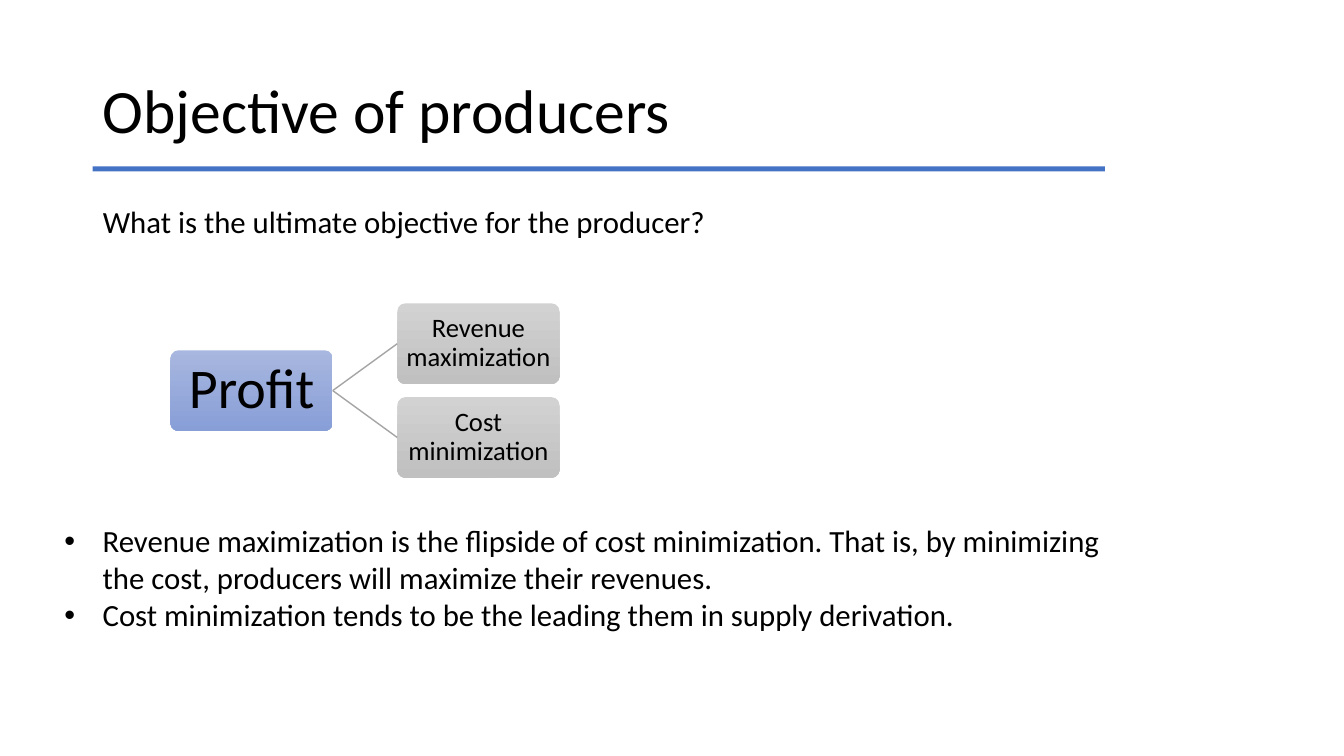
"""Build the slide on the objective of producers."""
from lxml.etree import SubElement
from pptx import Presentation
from pptx.dml.color import RGBColor
from pptx.enum.shapes import MSO_CONNECTOR, MSO_SHAPE
from pptx.enum.text import MSO_ANCHOR, MSO_AUTO_SIZE, PP_ALIGN
from pptx.oxml.ns import qn
from pptx.util import Inches, Pt


def color(value):
    return RGBColor.from_string(value)


def write(shape, lines, size, align=PP_ALIGN.LEFT, anchor=MSO_ANCHOR.TOP, spacing=0.9, before=0, bullet=None):
    frame = shape.text_frame
    frame.word_wrap = True
    frame.auto_size = MSO_AUTO_SIZE.NONE
    frame.vertical_anchor = anchor
    frame.text = "\n".join(lines)
    for paragraph in frame.paragraphs:
        properties = paragraph._p.get_or_add_pPr()
        indent = Inches(0.38) if bullet else 0
        properties.set("marL", str(indent))
        properties.set("indent", str(-indent))
        if bullet:
            SubElement(properties, qn("a:buFont"), typeface="Arial")
            SubElement(properties, qn("a:buChar"), char=bullet)
        else:
            SubElement(properties, qn("a:buNone"))
        paragraph.alignment = align
        paragraph.line_spacing = spacing
        paragraph.space_before = Pt(before)
        paragraph.font.name = "Calibri"
        paragraph.font.size = Pt(size)
        paragraph.font.color.rgb = color("000000")


presentation = Presentation()
presentation.slide_width = Inches(13.33)
presentation.slide_height = Inches(7.5)
slide = presentation.slides.add_slide(presentation.slide_layouts[1])
shapes = slide.shapes
left, content_width = Inches(0.92), Inches(11.5)

title = shapes.title
title.left, title.top, title.width, title.height = left, Inches(0.4), content_width, Inches(1.45)
write(title, ["Objective of producers"], 44, anchor=MSO_ANCHOR.MIDDLE)

question = slide.placeholders[1]
question.left, question.top, question.width, question.height = left, Inches(2), content_width, Inches(4.76)
write(question, ["What is the ultimate objective for the producer?"], 22, before=10)

rule = shapes.add_shape(MSO_SHAPE.RECTANGLE, left, Inches(1.65), Inches(10.04), Inches(0.05))
rule.shadow.inherit = False
rule.fill.solid()
rule.fill.fore_color.rgb = color("4472C4")
rule.line.fill.background()

node_width, node_height = Inches(1.61), Inches(0.8)
column_step, row_step = Inches(2.25), Inches(0.93)
tree_left, tree_top = Inches(1.69), Inches(3.01)
blue, gray = ("A8B7DF", "889ED7"), ("D2D2D2", "C0C0C0")
nodes = []
for label, column, row, size, gradient in [
    ("Profit", 0, 0.5, 40, blue),
    ("Revenue maximization", 1, 0, 19, gray),
    ("Cost minimization", 1, 1, 19, gray),
]:
    node = shapes.add_shape(
        MSO_SHAPE.ROUNDED_RECTANGLE,
        tree_left + column * column_step,
        tree_top + int(row * row_step),
        node_width,
        node_height,
    )
    node.adjustments[0] = 0.1
    node.shadow.inherit = False
    node.fill.gradient()
    node.fill.gradient_angle = 270
    for stop, shade in zip(node.fill.gradient_stops, gradient):
        stop.color.rgb = color(shade)
    node.line.fill.background()
    frame = node.text_frame
    frame.margin_left = frame.margin_right = frame.margin_top = frame.margin_bottom = Inches(0.03)
    write(node, [label], size, PP_ALIGN.CENTER, MSO_ANCHOR.MIDDLE)
    nodes.append(node)

profit, *branches = nodes
for branch in branches:
    link = shapes.add_connector(MSO_CONNECTOR.STRAIGHT, 0, 0, 0, 0)
    link.begin_connect(profit, 3)
    link.end_connect(branch, 1)
    link.line.color.rgb = color("A5A5A5")
    link.line.width = Pt(1)
    SubElement(link._element.spPr, qn("a:effectLst"))

notes = shapes.add_textbox(Inches(0.54), Inches(5.13), Inches(10.87), Inches(1.21))
write(
    notes,
    [
        "Revenue maximization is the flipside of cost minimization. "
        "That is, by minimizing the cost, producers will maximize their revenues.",
        "Cost minimization tends to be the leading them in supply derivation.",
    ],
    22,
    spacing=1.0,
    bullet="•",
)

presentation.save("out.pptx")
